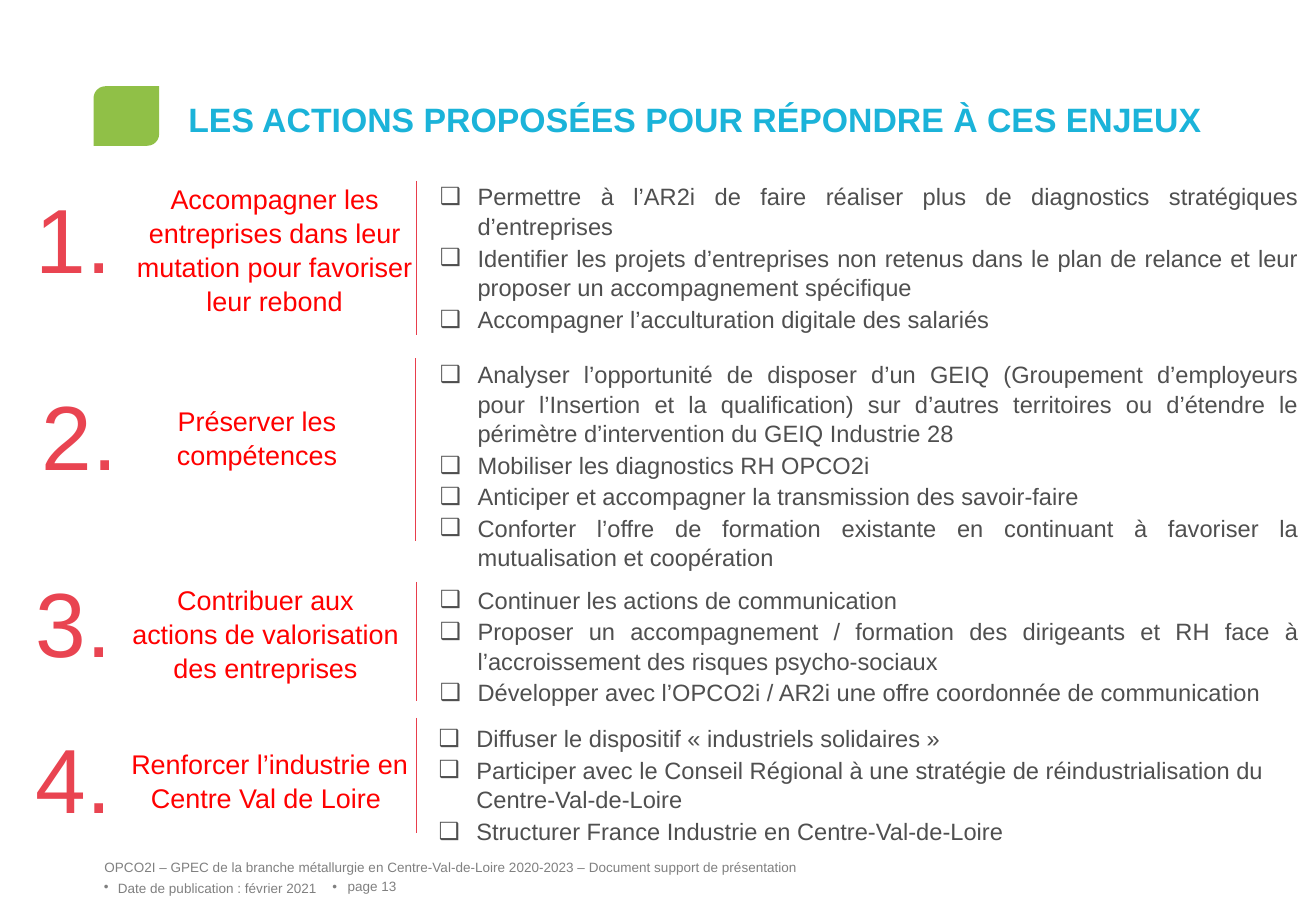
import pptx
import pptx.util
import pptx.dml.color
import pptx.enum.shapes
import pptx.enum.text
import pptx.oxml
import pptx.oxml.ns

SLIDE = (1083, 750)
EMU_PER_PX = 9144

TITLE = ("LES ACTIONS PROPOSÉES POUR RÉPONDRE À CES ENJEUX", (155, 72, 851, 43))
EMBLEM = (77, 71, 54, 49)

ACTIONS = [
    {
        "number": ("1.", (19, 141)),
        "goal": ("Accompagner les entreprises dans leur mutation pour favoriser leur rebond",
                 (109, 149, 234, 127)),
        "steps": [
            "Permettre à l’AR2i de faire réaliser plus de diagnostics stratégiques d’entreprises",
            "Identifier les projets d’entreprises non retenus dans le plan de relance et leur "
            "proposer un accompagnement spécifique",
            "Accompagner l’acculturation digitale des salariés",
        ],
        "area": (324, 149, 745, 127),
        "align": "JUSTIFY",
        "rule": (343, 149, 276),
    },
    {
        "number": ("2.", (24, 303)),
        "goal": ("Préserver les compétences", (85, 332, 253, 43)),
        "steps": [
            "Analyser l’opportunité de disposer d’un GEIQ (Groupement d’employeurs pour "
            "l’Insertion et la qualification) sur d’autres territoires ou d’étendre le "
            "périmètre d’intervention du GEIQ Industrie 28",
            "Mobiliser les diagnostics RH OPCO2i",
            "Anticiper et accompagner la transmission des savoir-faire",
            "Conforter l’offre de formation existante en continuant à favoriser la "
            "mutualisation et coopération",
        ],
        "area": (324, 295, 745, 165),
        "align": "JUSTIFY",
        "rule": (342, 295, 445),
    },
    {
        "number": ("3.", (19, 457)),
        "goal": ("Contribuer aux actions de valorisation des entreprises", (108, 479, 221, 101)),
        "steps": [
            "Continuer les actions de communication",
            "Proposer un accompagnement / formation des dirigeants et RH face à "
            "l’accroissement des risques psycho-sociaux",
            "Développer avec l’OPCO2i / AR2i une offre coordonnée de communication",
        ],
        "area": (324, 481, 745, 100),
        "align": "JUSTIFY",
        "rule": (343, 479, 577),
    },
    {
        "number": ("4.", (19, 585)),
        "goal": ("Renforcer l’industrie en Centre Val de Loire ", (102, 614, 240, 64)),
        "steps": [
            "Diffuser le dispositif « industriels solidaires »",
            "Participer avec le Conseil Régional à une stratégie de réindustrialisation du "
            "Centre-Val-de-Loire",
            "Structurer France Industrie en Centre-Val-de-Loire",
        ],
        "area": (323, 595, 737, 100),
        "align": "LEFT",
        "rule": (343, 591, 686),
    },
]
NUMBER_SIZE = (83, 101)

FOOTER = [
    ("OPCO2I – GPEC de la branche métallurgie en Centre-Val-de-Loire 2020-2023 – "
     "Document support de présentation", (86, 707, 787, 13), "LEFT"),
    ("•", (77, 723, 21, 13), "CENTER"),
    ("Date de publication : février 2021", (97, 725, 187, 13), "LEFT"),
    ("•", (265, 723, 21, 13), "CENTER"),
    ("page 13", (286, 723, 108, 13), "LEFT"),
]

THEME = {
    "font": "Arial",
    "title": {"size": 20, "color": "1BB3D9"},
    "number": {"size": 54, "color": "E94451"},
    "goal": {"size": 16, "color": "FF0000"},
    "step": {"size": 14, "color": "4F4F4F"},
    "footer": {"size": 8, "color": "808080"},
    "emblem": "90C047",
    "rule": "E83E4C",
    "rule_width": 0.75,
    "leading": 1.05,
    "gap": 1,
}
BULLET = {"char": "❑", "left": 69, "hanging": 31}


def px(*lengths):
    return [pptx.util.Emu(length * EMU_PER_PX) for length in lengths]


def rgb(value):
    return pptx.dml.color.RGBColor.from_string(value)


def add_bullet(para):
    left, hanging = px(BULLET["left"], BULLET["hanging"])
    properties = para._p.get_or_add_pPr()
    properties.set("marL", str(left))
    properties.set("indent", str(-hanging))
    for tag, key, value in (("buFont", "typeface", THEME["font"]),
                            ("buChar", "char", BULLET["char"])):
        element = pptx.oxml.parse_xml(f"<a:{tag} {pptx.oxml.ns.nsdecls('a')}/>")
        element.set(key, value)
        properties.append(element)


def add_text(page, lines, area, *, style, align="LEFT", anchor="TOP", bold=False,
             wrap=True, insets=(0, 0), leading=None, gap=0, bullets=False):
    box = page.shapes.add_textbox(*px(*area))
    frame = box.text_frame
    frame.word_wrap = wrap
    frame.vertical_anchor = pptx.enum.text.MSO_ANCHOR[anchor]
    frame.margin_left = frame.margin_right = px(insets[0])[0]
    frame.margin_top = frame.margin_bottom = px(insets[1])[0]
    for index, line in enumerate(lines):
        para = frame.add_paragraph() if index else frame.paragraphs[0]
        if bullets:
            add_bullet(para)
        para.alignment = pptx.enum.text.PP_ALIGN[align]
        para.line_spacing = leading
        para.space_after = pptx.util.Pt(gap)
        span = para.add_run()
        span.text = line
        span.font.name = THEME["font"]
        span.font.size = pptx.util.Pt(THEME[style]["size"])
        span.font.bold = bold
        span.font.color.rgb = rgb(THEME[style]["color"])


def add_emblem(page):
    emblem = page.shapes.add_shape(
        pptx.enum.shapes.MSO_SHAPE.ROUND_2_DIAG_RECTANGLE, *px(*EMBLEM))
    emblem.shadow.inherit = False
    emblem.adjustments[0] = 0.2
    emblem.adjustments[1] = 0
    emblem.fill.solid()
    emblem.fill.fore_color.rgb = rgb(THEME["emblem"])
    emblem.line.fill.background()


def add_rule(page, x, top, bottom):
    rule = page.shapes.add_connector(
        pptx.enum.shapes.MSO_CONNECTOR.STRAIGHT, *px(x, top, x, bottom))
    rule.line.color.rgb = rgb(THEME["rule"])
    rule.line.width = pptx.util.Pt(THEME["rule_width"])
    rule._element.spPr.append(
        pptx.oxml.parse_xml(f"<a:effectLst {pptx.oxml.ns.nsdecls('a')}/>"))


def main():
    deck = pptx.Presentation()
    deck.slide_width, deck.slide_height = px(*SLIDE)
    page = deck.slides.add_slide(deck.slide_layouts[6])

    for text, area, align in FOOTER:
        add_text(page, [text], area, style="footer", align=align, anchor="MIDDLE")
    add_emblem(page)
    add_text(page, [TITLE[0]], TITLE[1], style="title", anchor="BOTTOM", bold=True)

    spacing = {"leading": THEME["leading"], "gap": THEME["gap"]}
    for action in ACTIONS:
        goal, goal_area = action["goal"]
        number, corner = action["number"]
        add_text(page, [goal], goal_area, style="goal", align="CENTER", **spacing)
        add_text(page, [number], corner + NUMBER_SIZE, style="number", align="CENTER",
                 wrap=False, insets=(10, 5), leading=THEME["leading"])
        add_text(page, action["steps"], action["area"], style="step",
                 align=action["align"], bullets=True, **spacing)
        add_rule(page, *action["rule"])

    deck.save("out.pptx")


if __name__ == "__main__":
    main()
